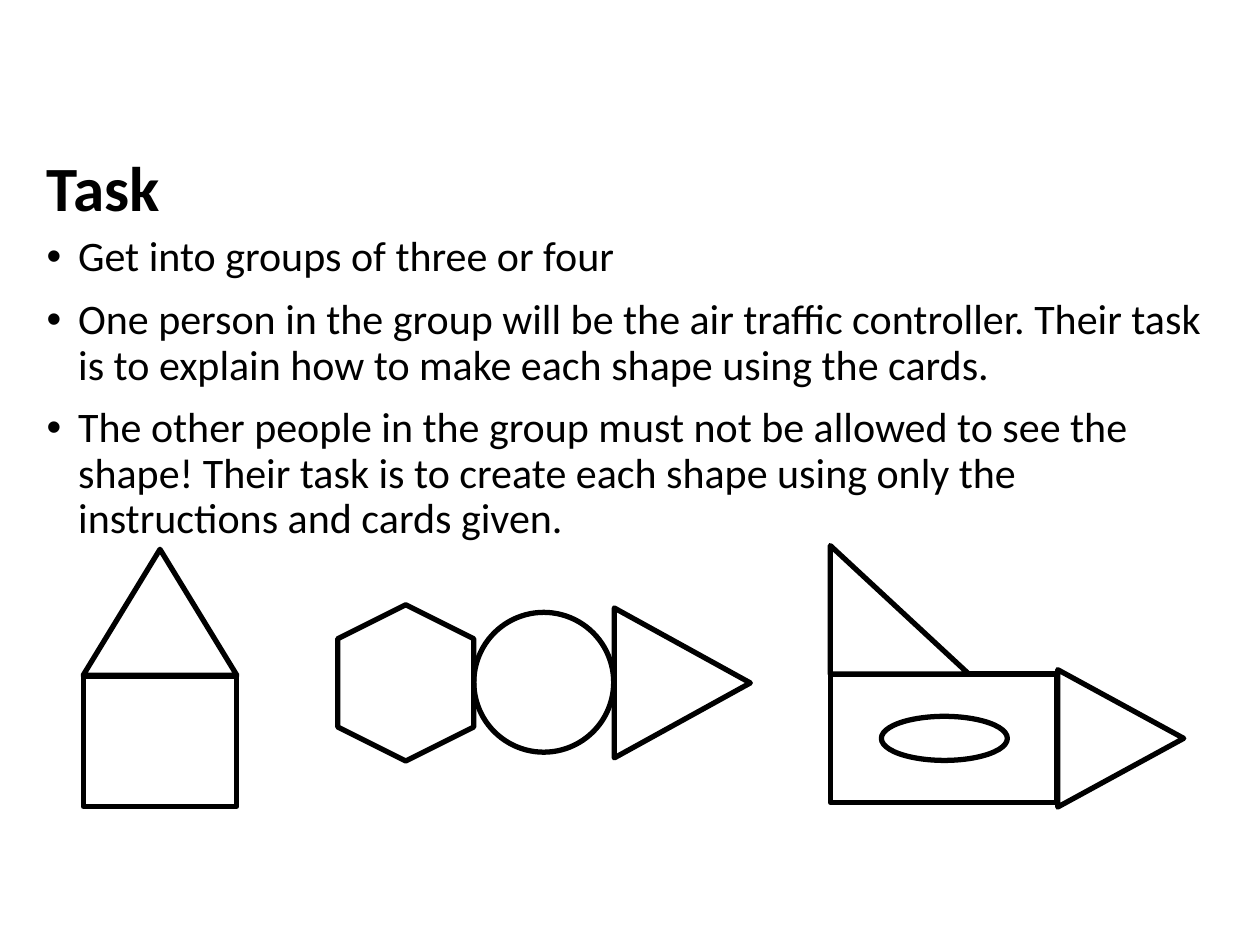
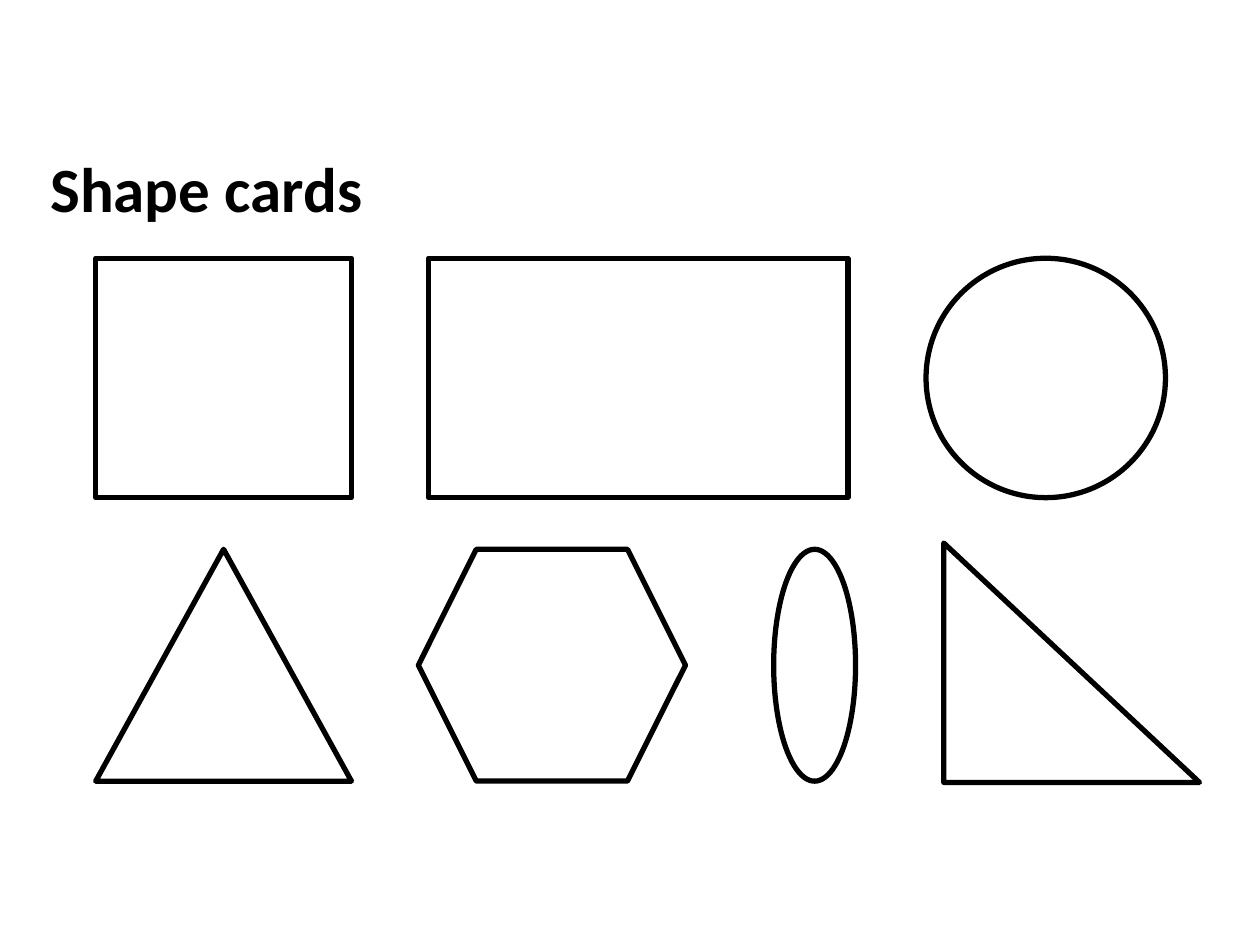
from dataclasses import dataclass

from pptx import Presentation
from pptx.dml.color import RGBColor
from pptx.enum.shapes import MSO_SHAPE as Preset
from pptx.enum.text import MSO_ANCHOR as Anchor
from pptx.enum.text import MSO_AUTO_SIZE as AutoSize
from pptx.enum.text import PP_ALIGN as Align
from pptx.shapes.placeholder import SlidePlaceholder
from pptx.shapes.shapetree import _BaseGroupShapes as ShapeCollection
from pptx.slide import Slide
from pptx.text.text import TextFrame, _Paragraph as Paragraph
from pptx.util import Emu, Pt

EMU_PER_PX = 9144
COLOURS = {"ink": "000000", "paper": "FFFFFF"}
FONT = "Calibri"
TITLE_POINTS = 36
BODY_POINTS = 24
OUTLINE_POINTS = 3
BULLET_INDENT = 25
TITLE_AND_CONTENT = 1
TITLE_ONLY = 5

CARD_LEFT = 76
CARD_WIDTH = 203
TOP_ROW, TOP_HEIGHT = 205, 190
LOWER_ROW, LOWER_HEIGHT = 436, 184


@dataclass(frozen=True)
class Box:
    left: int
    top: int
    width: int
    height: int


@dataclass(frozen=True)
class Figure:
    preset: Preset
    box: Box
    rotation: int = 0


TASKS = [
    "Get into groups of three or four",
    "One person in the group will be the air traffic controller. "
    "Their task is to explain how to make each shape using the cards.",
    "The other people in the group must not be allowed to see the shape! "
    "Their task is to create each shape using only the instructions and cards given.",
]

HOUSE = [
    Figure(Preset.RECTANGLE, Box(66, 537, 122, 103)),
    Figure(Preset.ISOSCELES_TRIANGLE, Box(66, 436, 122, 100)),
]
FISH = [
    Figure(Preset.OVAL, Box(376, 486, 111, 111), 90),
    Figure(Preset.ISOSCELES_TRIANGLE, Box(482, 488, 119, 108), 90),
    Figure(Preset.HEXAGON, Box(260, 488, 124, 108), 90),
]
PLANE = [
    Figure(Preset.RECTANGLE, Box(659, 535, 180, 102)),
    Figure(Preset.ISOSCELES_TRIANGLE, Box(835, 536, 109, 100), 90),
    Figure(Preset.RIGHT_TRIANGLE, Box(659, 433, 110, 102)),
    Figure(Preset.OVAL, Box(732, 536, 35, 100), 90),
]
CARDS = [
    Figure(Preset.RECTANGLE, Box(CARD_LEFT, TOP_ROW, CARD_WIDTH, TOP_HEIGHT)),
    Figure(Preset.OVAL, Box(735, TOP_ROW, TOP_HEIGHT, TOP_HEIGHT)),
    Figure(Preset.RECTANGLE, Box(340, TOP_ROW, 333, TOP_HEIGHT)),
    Figure(Preset.ISOSCELES_TRIANGLE, Box(CARD_LEFT, LOWER_ROW, CARD_WIDTH, LOWER_HEIGHT)),
    Figure(Preset.HEXAGON, Box(332, LOWER_ROW, 212, LOWER_HEIGHT)),
    Figure(Preset.RIGHT_TRIANGLE, Box(749, 431, CARD_WIDTH, TOP_HEIGHT)),
    Figure(Preset.OVAL, Box(614, LOWER_ROW, 65, LOWER_HEIGHT)),
]


def px(length: int) -> Emu:
    return Emu(length * EMU_PER_PX)


def colour(name: str) -> RGBColor:
    return RGBColor.from_string(COLOURS[name])


def place(placeholder: SlidePlaceholder, box: Box, anchor: Anchor) -> TextFrame:
    placeholder.left, placeholder.top = px(box.left), px(box.top)
    placeholder.width, placeholder.height = px(box.width), px(box.height)
    frame = placeholder.text_frame
    frame.word_wrap = True
    frame.auto_size = AutoSize.NONE
    frame.vertical_anchor = anchor
    return frame


def write(paragraph: Paragraph, text: str, points: int, bold: bool = False) -> None:
    paragraph.alignment = Align.LEFT
    paragraph.line_spacing = 0.9
    run = paragraph.add_run()
    run.text = text
    run.font.name = FONT
    run.font.size = Pt(points)
    run.font.bold = bold
    run.font.color.rgb = colour("ink")


def add_title(slide: Slide, text: str, box: Box) -> None:
    frame = place(slide.shapes.title, box, Anchor.MIDDLE)
    write(frame.paragraphs[0], text, TITLE_POINTS, bold=True)


def add_bullets(slide: Slide, items: list[str], box: Box) -> None:
    frame = place(slide.placeholders[1], box, Anchor.TOP)
    for index, item in enumerate(items):
        paragraph = frame.add_paragraph() if index else frame.paragraphs[0]
        properties = paragraph._p.get_or_add_pPr()
        properties.set("marL", str(px(BULLET_INDENT)))
        properties.set("indent", str(-px(BULLET_INDENT)))
        paragraph.space_before = Pt(10 if index else 0)
        write(paragraph, item, BODY_POINTS)


def draw_figures(shapes: ShapeCollection, figures: list[Figure]) -> None:
    for figure in figures:
        box = figure.box
        shape = shapes.add_shape(
            figure.preset, px(box.left), px(box.top), px(box.width), px(box.height)
        )
        shape.rotation = figure.rotation
        shape.shadow.inherit = False
        shape.fill.solid()
        shape.fill.fore_color.rgb = colour("paper")
        shape.line.color.rgb = colour("ink")
        shape.line.width = Pt(OUTLINE_POINTS)


def add_slide(presentation: Presentation, layout_index: int) -> Slide:
    slide = presentation.slides.add_slide(presentation.slide_layouts[layout_index])
    slide.background.fill.solid()
    slide.background.fill.fore_color.rgb = colour("paper")
    return slide


def build_task_slide(presentation: Presentation) -> None:
    slide = add_slide(presentation, TITLE_AND_CONTENT)
    add_title(slide, "Task", Box(27, 112, 782, 79))
    add_bullets(slide, TASKS, Box(27, 182, 945, 292))
    for figures in (HOUSE, FISH, PLANE):
        draw_figures(slide.shapes.add_group_shape().shapes, figures)


def build_cards_slide(presentation: Presentation) -> None:
    slide = add_slide(presentation, TITLE_ONLY)
    add_title(slide, "Shape cards", Box(30, 113, 666, 79))
    draw_figures(slide.shapes, CARDS)


def main() -> None:
    presentation = Presentation()
    presentation.slide_width = px(1000)
    presentation.slide_height = px(750)
    build_task_slide(presentation)
    build_cards_slide(presentation)
    presentation.save("out.pptx")


if __name__ == "__main__":
    main()
